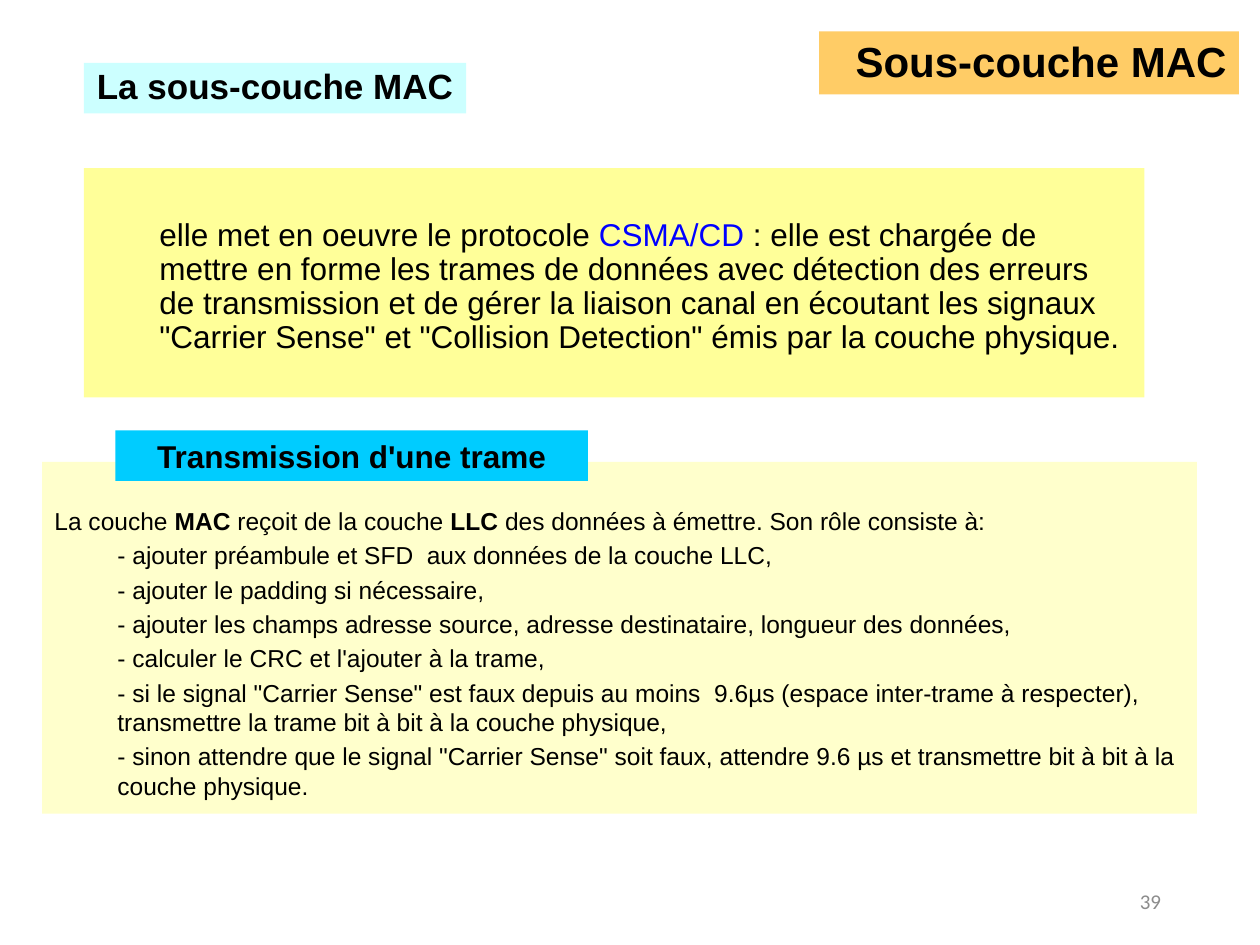
from pptx import Presentation
from pptx.dml.color import RGBColor
from pptx.enum.shapes import MSO_SHAPE
from pptx.enum.text import MSO_ANCHOR as ANCHOR, PP_ALIGN as ALIGN
from pptx.util import Inches, Pt

UNIT = Inches(1) / 12
BLACK = RGBColor(0x00, 0x00, 0x00)
BLUE = RGBColor(0x00, 0x00, 0xFF)
GREY = RGBColor(0x8C, 0x8C, 0x8C)
ORANGE = RGBColor(0xFF, 0xCC, 0x66)
YELLOW = RGBColor(0xFF, 0xFF, 0x99)
CREAM = RGBColor(0xFF, 0xFF, 0xCC)
PALE_CYAN = RGBColor(0xCC, 0xFF, 0xFF)
CYAN = RGBColor(0x00, 0xCC, 0xFF)

PROTOCOL = [
    ("elle met en oeuvre le protocole ", {}),
    ("CSMA/CD", {"color": BLUE}),
    (" : elle est chargée de mettre en forme les trames de données avec "
     "détection des erreurs de transmission et de gérer la liaison canal en "
     'écoutant les signaux "Carrier Sense" et "Collision Detection" émis par '
     "la couche physique.", {}),
]
ROLE = [
    ("La couche ", {}),
    ("MAC", {"bold": True}),
    (" reçoit de la couche ", {}),
    ("LLC", {"bold": True}),
    (" des données à émettre. Son rôle consiste à:", {}),
]
STEPS = [
    "- ajouter préambule et SFD  aux données de la couche LLC,",
    "- ajouter le padding si nécessaire,",
    "- ajouter les champs adresse source, adresse destinataire, longueur des données,",
    "- calculer le CRC et l'ajouter à la trame,",
    '- si le signal "Carrier Sense" est faux depuis au moins  9.6µs (espace inter-trame '
    "à respecter), transmettre la trame bit à bit à la couche physique,",
    '- sinon attendre que le signal "Carrier Sense" soit faux, attendre 9.6 µs et '
    "transmettre bit à bit à la couche physique.",
]


def add_box(slide, cells, fill, top=0.05, anchor=ANCHOR.TOP):
    """Add a filled rectangle placed on the grid and return its text frame."""
    box = [round(c * UNIT) for c in cells]
    sp = slide.shapes.add_shape(MSO_SHAPE.RECTANGLE, *box)
    sp.shadow.inherit = False
    sp.fill.solid()
    sp.fill.fore_color.rgb = fill
    sp.line.fill.background()
    tf = sp.text_frame
    tf.word_wrap = True
    tf.vertical_anchor = anchor
    tf.margin_top = Inches(top)
    return tf


def add_run(p, text, size, color=BLACK, bold=False, font="Arial"):
    """Add one formatted run."""
    r = p.add_run()
    r.text = text
    r.font.size, r.font.name, r.font.bold = Pt(size), font, bold
    r.font.color.rgb = color


def write(p, runs, size, align=ALIGN.LEFT, spacing=1.0, before=0, indent=0):
    """Fill a paragraph with runs given as text and style."""
    p.alignment = align
    p.line_spacing = Pt(round(size * 1.2 * spacing, 2))
    p.space_before = Pt(before)
    p._p.get_or_add_pPr().set("marL", str(Inches(indent)))
    for text, style in runs:
        add_run(p, text, size, **style)


def add_heading(slide, cells, fill, text, size, align=ALIGN.CENTER, spacing=0.9,
                anchor=ANCHOR.TOP):
    """Add a coloured box with one bold line."""
    tf = add_box(slide, cells, fill, anchor=anchor)
    write(tf.paragraphs[0], [(text, {"bold": True})], size, align, spacing)


def add_page_number(slide, cells, text):
    """Add the page number at the bottom right."""
    sp = slide.shapes.add_textbox(*[round(c * UNIT) for c in cells])
    tf = sp.text_frame
    tf.word_wrap = True
    tf.vertical_anchor = ANCHOR.MIDDLE
    p = tf.paragraphs[0]
    p.alignment = ALIGN.RIGHT
    add_run(p, text, 12, GREY, font="Calibri")


def main():
    """Build the slide and save it."""
    prs = Presentation()
    prs.slide_width, prs.slide_height = Inches(10), Inches(7.5)
    slide = prs.slides.add_slide(prs.slide_layouts[6])

    add_page_number(slide, (84.75, 83.4, 27, 4.8), "39")
    add_heading(slide, (78, 3, 40, 6), ORANGE, "Sous-couche MAC", 24,
                ALIGN.RIGHT, anchor=ANCHOR.MIDDLE)

    tf = add_box(slide, (8, 16, 101, 21.84), YELLOW, top=0.4)
    write(tf.paragraphs[0], PROTOCOL, 18, spacing=0.9, indent=0.5)
    add_heading(slide, (8, 6, 36.4, 4.8), PALE_CYAN, "La sous-couche MAC", 20)

    tf = add_box(slide, (4, 44, 110, 33.5), CREAM, top=0.35)
    write(tf.paragraphs[0], ROLE, 14)
    for step in STEPS:
        write(tf.add_paragraph(), [(step, {})], 14, before=2.8, indent=0.5)
    add_heading(slide, (11, 41, 45, 4.8), CYAN, "Transmission d'une trame", 18,
                spacing=1.0)

    prs.save("out.pptx")


if __name__ == "__main__":
    main()
